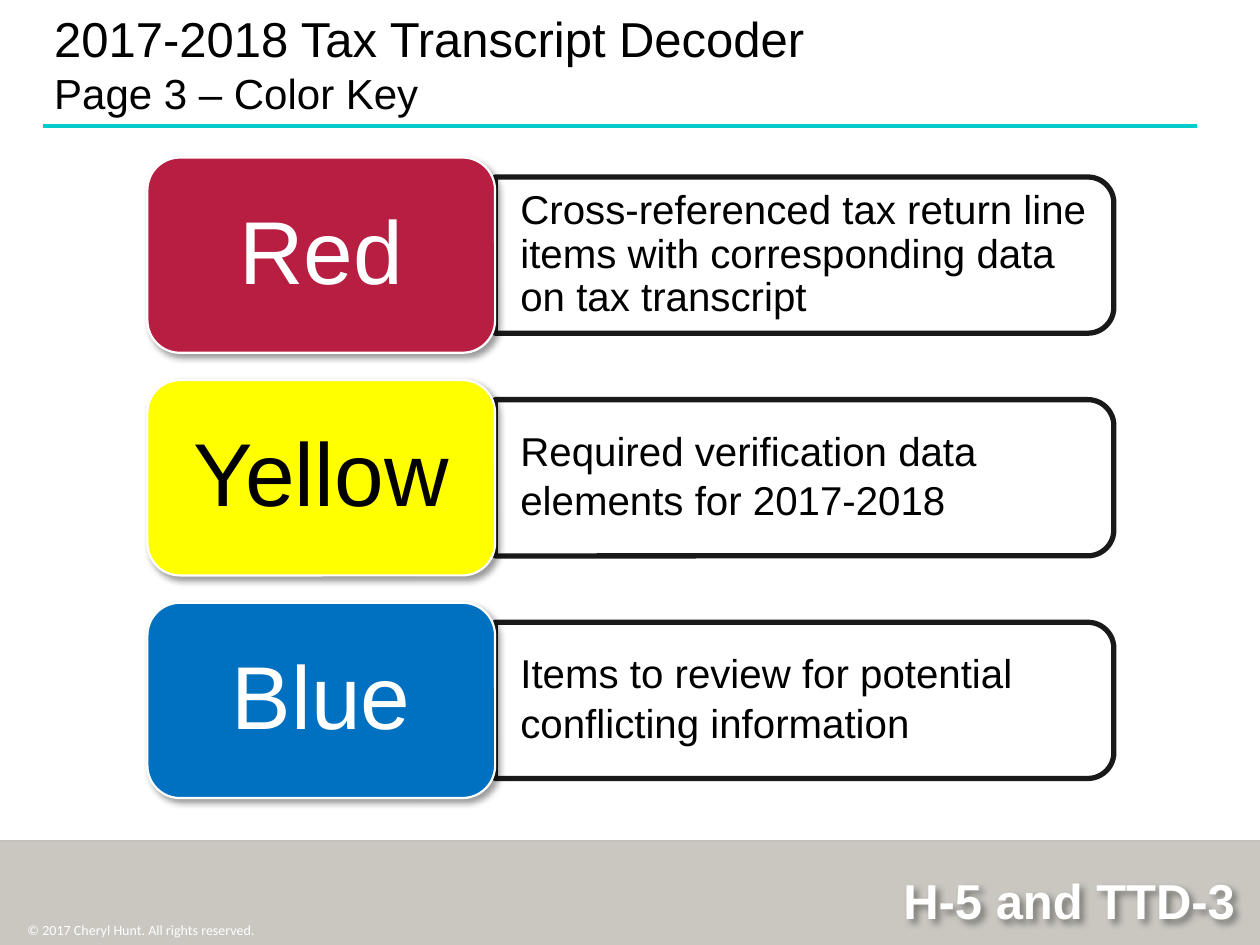
from dataclasses import dataclass

from lxml import etree
from pptx import Presentation
from pptx.dml.color import RGBColor
from pptx.enum.shapes import MSO_CONNECTOR, MSO_SHAPE
from pptx.enum.text import MSO_ANCHOR, MSO_AUTO_SIZE, PP_ALIGN
from pptx.oxml.ns import qn
from pptx.util import Emu, Inches, Pt

ROUND_RECT = MSO_SHAPE.ROUNDED_RECTANGLE
ROUND_TOP = MSO_SHAPE.ROUND_2_SAME_RECTANGLE
RECT = MSO_SHAPE.RECTANGLE
STRAIGHT = MSO_CONNECTOR.STRAIGHT
MIDDLE = MSO_ANCHOR.MIDDLE
TOP = MSO_ANCHOR.TOP
LEFT, CENTER, RIGHT = PP_ALIGN.LEFT, PP_ALIGN.CENTER, PP_ALIGN.RIGHT
TITLE_ONLY = 5

UNIT = Inches(0.1)  # the slide is a grid of 100 columns by 75 rows
COLUMNS, ROWS = 100, 75
FOOTER_ROW = 66.7
KEY_LEFT, KEY_WIDTH, KEY_HEIGHT = 11.7, 27.6, 15.5
MEANING_WIDTH, MEANING_HEIGHT = 49.1, 12.4
FIRST_KEY_ROW, KEY_PITCH = 12.5, 17.67


@dataclass(frozen=True)
class Theme:
    font: str = "Arial"
    small_font: str = "Calibri"
    ink: str = "000000"
    paper: str = "FFFFFF"
    band: str = "CAC7C1"
    accent: str = "00CCCC"
    title: float = 28
    subtitle: float = 24
    key: float = 51
    meaning: float = 23
    copyright: float = 8


@dataclass(frozen=True)
class Area:
    left: float
    top: float
    width: float
    height: float

    def emu(self) -> tuple:
        return tuple(grid(n) for n in (self.left, self.top, self.width, self.height))


@dataclass(frozen=True)
class ColorKey:
    name: str
    fill: str
    ink: str
    meaning: str


THEME = Theme()
COLOR_KEYS = (
    ColorKey("Red", "B71E42", THEME.paper,
             "Cross-referenced tax return line items with corresponding data on tax transcript"),
    ColorKey("Yellow", "FFFF00", THEME.ink,
             "Required verification data\nelements for 2017-2018"),
    ColorKey("Blue", "0070C0", THEME.paper,
             "Items to review for potential\nconflicting information"),
)


def grid(units: float) -> Emu:
    return Emu(round(units * UNIT))


def rgb(color: str) -> RGBColor:
    return RGBColor.from_string(color)


def set_alpha(fill, percent: int) -> None:
    color = fill._xPr.find(qn("a:solidFill"))[0]
    etree.SubElement(color, qn("a:alpha"), val=str(percent * 1000))


def add_shadow(shape) -> None:
    shape.shadow.inherit = False
    effects = shape._element.spPr.find(qn("a:effectLst"))
    outer = etree.SubElement(effects, qn("a:outerShdw"), blurRad=str(Pt(4)),
                             dist=str(Pt(3)), dir="2700000", rotWithShape="0")
    color = etree.SubElement(outer, qn("a:srgbClr"), val=THEME.ink)
    etree.SubElement(color, qn("a:alpha"), val="40000")


def add_box(slide, kind, area: Area, fill: str, line: str = "", weight: float = 0):
    box = slide.shapes.add_shape(kind, *area.emu())
    box.fill.solid()
    box.fill.fore_color.rgb = rgb(fill)
    if line:
        box.line.color.rgb = rgb(line)
        box.line.width = Pt(weight)
    else:
        box.line.fill.background()
    box.shadow.inherit = False
    return box


def add_rule(slide, left: float, right: float, row: float, color: str, weight: float):
    rule = slide.shapes.add_connector(STRAIGHT, grid(left), grid(row), grid(right), grid(row))
    rule.line.color.rgb = rgb(color)
    rule.line.width = Pt(weight)
    etree.SubElement(rule._element.spPr, qn("a:effectLst"))
    return rule


def write(shape, text: str, size: float, color: str, align=LEFT, anchor=MIDDLE,
          font: str = THEME.font, bold: bool = False, spacing: float = 1,
          after: float = 0, wrap: bool = True) -> None:
    frame = shape.text_frame
    frame.text = text
    frame.word_wrap = wrap
    frame.auto_size = MSO_AUTO_SIZE.NONE
    frame.vertical_anchor = anchor
    for paragraph in frame.paragraphs:
        paragraph.alignment = align
        paragraph.line_spacing = spacing
        paragraph.space_after = Pt(after)
        for run in paragraph.runs:
            run.font.name = font
            run.font.size = Pt(size)
            run.font.bold = bold
            run.font.color.rgb = rgb(color)


def add_backdrop(slide) -> None:
    slide.background.fill.solid()
    slide.background.fill.fore_color.rgb = rgb(THEME.band)
    edge = add_rule(slide, 0, COLUMNS, FOOTER_ROW, THEME.ink, 1)
    set_alpha(edge.line.fill, 20)
    add_box(slide, RECT, Area(0, 0, COLUMNS, FOOTER_ROW), THEME.paper)
    add_rule(slide, 3.4, 95, 10, THEME.accent, 2.5)


def add_title(slide) -> None:
    title = slide.shapes.title
    slide.shapes._spTree.append(title._element)  # bring in front of the backdrop
    title.left, title.top, title.width, title.height = Area(3.3, 0, 91.7, 10).emu()
    write(title, "2017-2018 Tax Transcript Decoder\nPage 3 – Color Key", THEME.title, THEME.ink)
    title.text_frame.paragraphs[1].runs[0].font.size = Pt(THEME.subtitle)


def add_color_key(slide, key: ColorKey, top: float) -> None:
    """Draw a colored key box with its meaning in the outlined box to its right."""
    left = KEY_LEFT + KEY_WIDTH
    middle = top + KEY_HEIGHT / 2
    # Turned a quarter, so its width and height trade places about the center
    outline = add_box(slide, ROUND_TOP,
                      Area(left + (MEANING_WIDTH - MEANING_HEIGHT) / 2,
                           middle - MEANING_WIDTH / 2, MEANING_HEIGHT, MEANING_WIDTH),
                      THEME.paper, THEME.ink, 3)
    outline.rotation = 90
    set_alpha(outline.fill, 90)
    set_alpha(outline.line.fill, 90)

    meaning = slide.shapes.add_textbox(*Area(left, middle - 5.6, 48.5, 11.2).emu())
    write(meaning, key.meaning, THEME.meaning, THEME.ink, spacing=0.9, after=3.5)
    meaning.text_frame.margin_left = grid(2)

    name = add_box(slide, ROUND_RECT, Area(KEY_LEFT, top, KEY_WIDTH, KEY_HEIGHT),
                   key.fill, THEME.paper, 1.25)
    add_shadow(name)
    write(name, key.name, THEME.key, key.ink, CENTER, spacing=0.9)


def add_footer(slide) -> None:
    handout = slide.shapes.add_textbox(*Area(66.7, 68.6, 32.3, 5.7).emu())
    write(handout, "H-5 and TTD-3", THEME.title, THEME.paper, RIGHT, bold=True)
    add_shadow(handout)
    rights = slide.shapes.add_textbox(*Area(1.2, 72.5, 22.6, 2.5).emu())
    write(rights, "© 2017 Cheryl Hunt. All rights reserved.", THEME.copyright, THEME.paper,
          anchor=TOP, font=THEME.small_font, spacing=1.1, wrap=False)


def main() -> None:
    deck = Presentation()
    deck.slide_width, deck.slide_height = grid(COLUMNS), grid(ROWS)
    slide = deck.slides.add_slide(deck.slide_layouts[TITLE_ONLY])
    add_backdrop(slide)
    add_title(slide)
    for index, key in enumerate(COLOR_KEYS):
        add_color_key(slide, key, FIRST_KEY_ROW + index * KEY_PITCH)
    add_footer(slide)
    deck.save("out.pptx")


if __name__ == "__main__":
    main()
